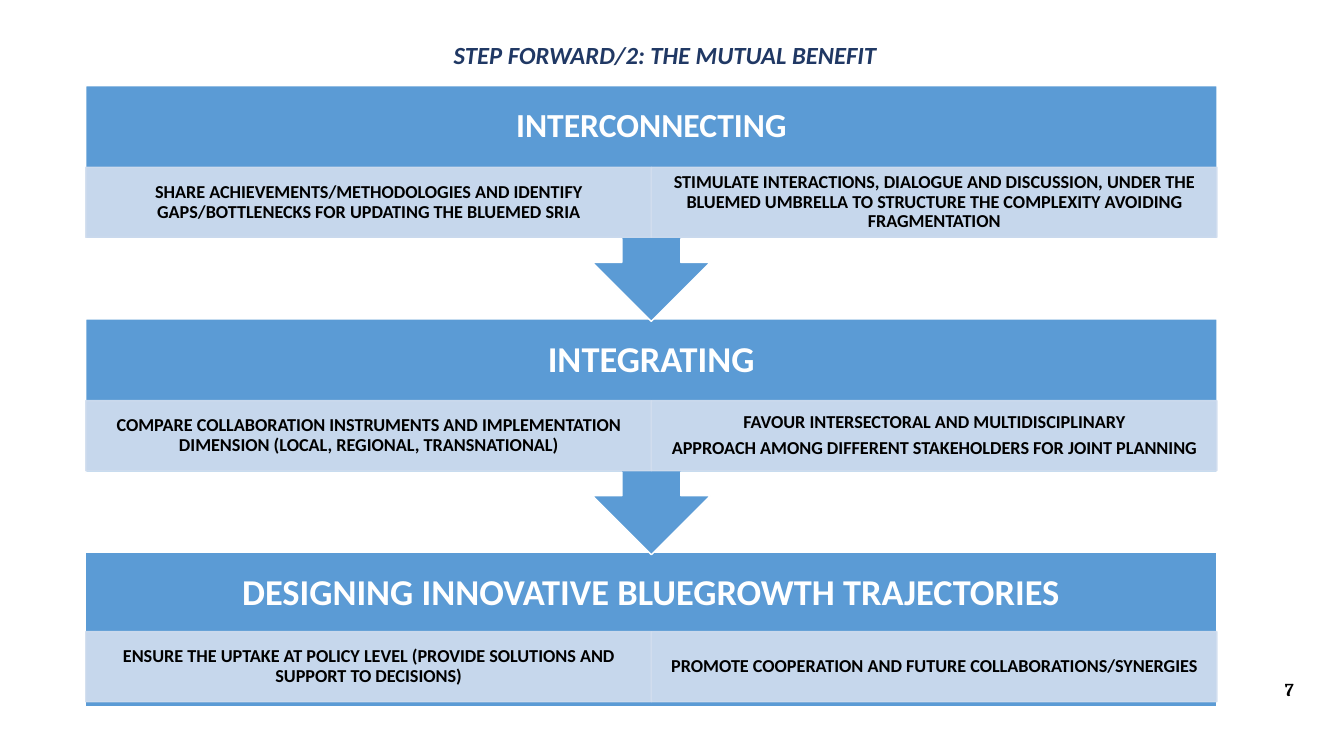
"""Build the slide on the three steps towards mutual benefit."""
from lxml import etree
from pptx import Presentation, util as u
from pptx.dml.color import RGBColor
from pptx.enum import shapes, text
from pptx.oxml.ns import qn

STEPS = [
    ("INTERCONNECTING", 24, [
        "SHARE ACHIEVEMENTS/METHODOLOGIES AND IDENTIFY GAPS/BOTTLENECKS FOR UPDATING THE BLUEMED SRIA",
        "STIMULATE INTERACTIONS, DIALOGUE AND DISCUSSION, UNDER THE BLUEMED UMBRELLA "
        "TO STRUCTURE THE COMPLEXITY AVOIDING FRAGMENTATION"]),
    ("INTEGRATING", 26, [
        "COMPARE COLLABORATION INSTRUMENTS AND IMPLEMENTATION DIMENSION (LOCAL, REGIONAL, TRANSNATIONAL)",
        "FAVOUR INTERSECTORAL AND MULTIDISCIPLINARY\n"
        "APPROACH AMONG DIFFERENT STAKEHOLDERS FOR JOINT PLANNING"]),
    ("DESIGNING INNOVATIVE BLUEGROWTH TRAJECTORIES", 26, [
        "ENSURE THE UPTAKE AT POLICY LEVEL (PROVIDE SOLUTIONS AND SUPPORT TO DECISIONS)",
        "PROMOTE COOPERATION AND FUTURE COLLABORATIONS/SYNERGIES"]),
]


def paint(color_format, value):
    color_format.rgb = RGBColor.from_string(value)


def write(shape, content, size, color="000000", font="Calibri", italic=False, align="CENTER",
          anchor="MIDDLE", insets=(0.1, 0.02, 0.1, 0.02), spacing=0.9, gap=4.5):
    frame = shape.text_frame
    frame.word_wrap = True
    frame.auto_size = text.MSO_AUTO_SIZE.NONE
    frame.vertical_anchor = getattr(text.MSO_ANCHOR, anchor)
    for side, inset in zip(("left", "top", "right", "bottom"), insets):
        setattr(frame, f"margin_{side}", u.Inches(inset))
    frame.text = content
    for index, paragraph in enumerate(frame.paragraphs):
        paragraph.alignment = getattr(text.PP_ALIGN, align)
        paragraph.line_spacing = spacing
        paragraph.space_before = u.Pt(gap if index else 0)
        paragraph.font.name = font
        paragraph.font.size = u.Pt(size)
        paragraph.font.bold = True
        paragraph.font.italic = italic
        paint(paragraph.font.color, color)


class StepSlide:
    """Holds the grid, the colours and the current slide."""

    left, top, column, row = 0.85, 0.85, 5.61, 2.315
    blue, pale, white, navy = "5B9BD5", "D2DEEF", "FFFFFF", "203864"
    band, detail_height = 0.35, 0.3
    margins = (0.1, 0.05, 0.1, 0.05)

    def __init__(self, presentation):
        self.width, self.height = presentation.slide_width, presentation.slide_height
        self.slide = presentation.slides.add_slide(presentation.slide_layouts[5])

    def cell(self, column, row, columns, rows):
        return [u.Inches(length) for length in (
            self.left + column * self.column, self.top + row * self.row,
            columns * self.column, rows * self.row)]

    def share(self, left, top, width, height):
        return [int(left * self.width), int(top * self.height),
                int(width * self.width), int(height * self.height)]

    def title(self, content):
        title = self.slide.shapes.title
        title.left, title.top, title.width, title.height = self.share(0.16, 0.05, 0.67, 0.07)
        write(title, content, 17.6, self.navy, italic=True, anchor="TOP", insets=self.margins)

    def number(self, content):
        box = self.slide.shapes.add_textbox(*self.share(0.74, 0.89, 0.23, 0.05))
        write(box, content, 13, font="Cambria", align="RIGHT", anchor="TOP",
              insets=self.margins, spacing=1)

    def block(self, kind, place, fill, line, opacity=100):
        shape = self.slide.shapes.add_shape(kind, *self.cell(*place))
        shape.shadow.inherit = False
        shape.fill.solid()
        paint(shape.fill.fore_color, fill)
        paint(shape.line.color, line)
        shape.line.width = u.Pt(1)
        if opacity < 100:
            for color in shape._element.spPr.iter(qn("a:srgbClr")):
                etree.SubElement(color, qn("a:alpha"), val=str(opacity * 1000))
        return shape

    def step(self, row, heading, size, details, last):
        kinds = shapes.MSO_SHAPE
        kind, rows = (kinds.RECTANGLE, 0.66) if last else (kinds.DOWN_ARROW_CALLOUT, 1.01)
        banner = self.block(kind, (0, row, 2, rows), self.blue, self.white)
        write(banner, heading, size, self.white, insets=(0.2, 0.1, 0.2, 0.8))
        for column, detail in enumerate(details):
            place = (column, row + self.band - 0.01 * last, 1, self.detail_height)
            write(self.block(kinds.RECTANGLE, place, self.pale, self.pale, opacity=90), detail, 13)


def main():
    presentation = Presentation()
    presentation.slide_width, presentation.slide_height = u.Inches(13.33), u.Inches(7.5)
    page = StepSlide(presentation)
    page.number("7")
    page.title("STEP FORWARD/2: THE MUTUAL BENEFIT")
    for row, (heading, size, details) in reversed(list(enumerate(STEPS))):
        page.step(row, heading, size, details, last=row == len(STEPS) - 1)
    presentation.save("out.pptx")


if __name__ == "__main__":
    main()
